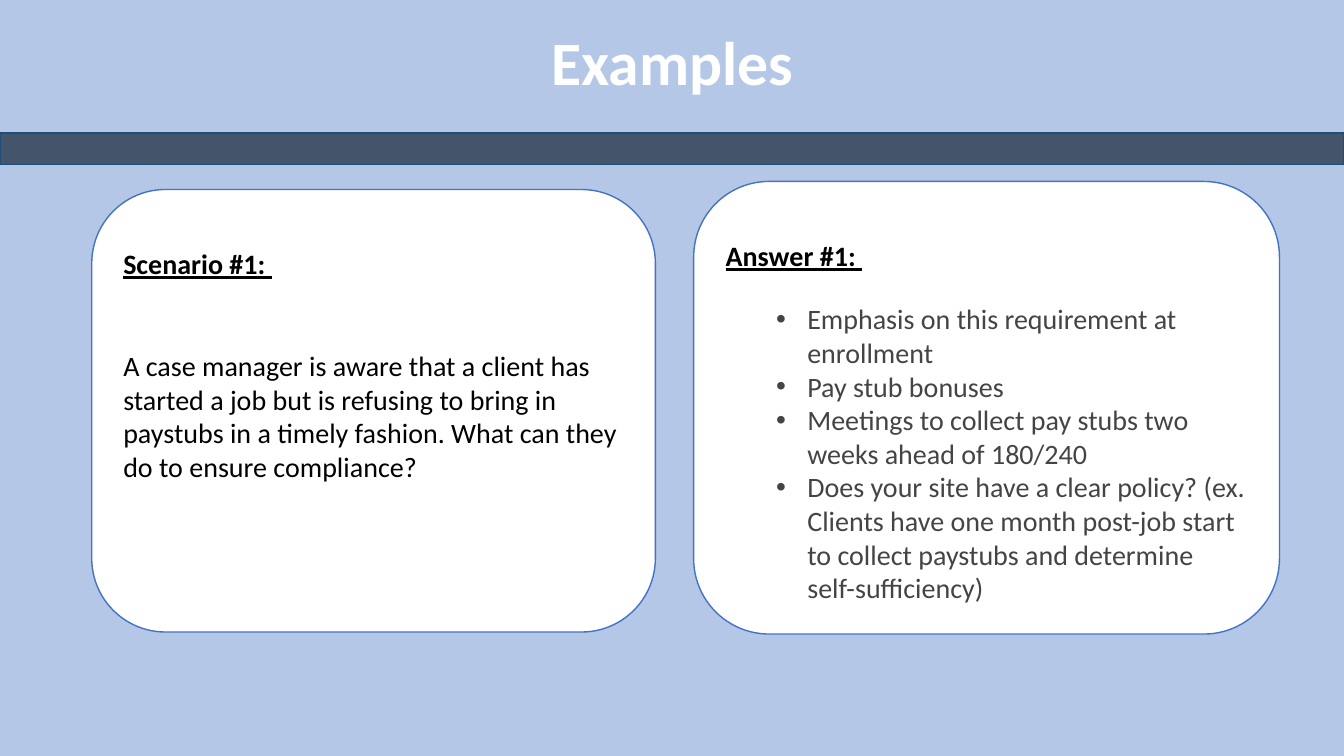
"""Build the Examples slide with a scenario card and an answer card."""
from lxml.etree import SubElement
from pptx import Presentation
from pptx.dml.color import RGBColor
from pptx.enum.shapes import MSO_SHAPE as Shape
from pptx.enum.text import MSO_ANCHOR as Anchor, PP_ALIGN as Align
from pptx.oxml.ns import qn
from pptx.util import Inches, Pt

WHITE = RGBColor(0xFF, 0xFF, 0xFF)
BLACK = RGBColor(0, 0, 0)
GREY = RGBColor(0x44, 0x44, 0x44)
PALE_BLUE = RGBColor(0xB4, 0xC7, 0xE7)
BLUE = RGBColor(0x44, 0x72, 0xC4)
SLATE = RGBColor(0x44, 0x54, 0x6A)
NAVY = RGBColor(0x1F, 0x4E, 0x79)

WIDTH, HEIGHT = 13.33, 7.5
FONT = "Calibri"
TITLE = "Examples"
CARDS = [
    {
        "box": (0.91, 1.88, 5.59, 4.39),
        "heading": "Scenario #1: ",
        "gap": 49,
        "color": BLACK,
        "bulleted": False,
        "body": [
            "A case manager is aware that a client has started a job but is "
            "refusing to bring in paystubs in a timely fashion. What can they "
            "do to ensure compliance? ",
        ],
    },
    {
        "box": (6.88, 1.8, 5.81, 4.49),
        "heading": "Answer #1: ",
        "gap": 21,
        "color": GREY,
        "bulleted": True,
        "body": [
            "Emphasis on this requirement at enrollment",
            "Pay stub bonuses",
            "Meetings to collect pay stubs two weeks ahead of 180/240",
            "Does your site have a clear policy? (ex. Clients have one month "
            "post-job start to collect paystubs and determine self-sufficiency) ",
        ],
    },
]


def add_box(slide, kind, box, fill, line=None):
    shape = slide.shapes.add_shape(kind, *map(Inches, box))
    shape.shadow.inherit = False
    shape.fill.solid()
    shape.fill.fore_color.rgb = fill
    if line is None:
        shape.line.fill.background()
    else:
        shape.line.color.rgb = line
        shape.line.width = Pt(1)
    return shape


def add_run(paragraph, text, size, color, bold=False, underline=False):
    run = paragraph.add_run()
    run.text = text
    font = run.font
    font.name, font.size, font.color.rgb = FONT, Pt(size), color
    font.bold, font.underline = bold, underline


def add_bullet(paragraph):
    paragraph.level = 1
    properties = paragraph._p.get_or_add_pPr()
    properties.set("marL", str(Inches(0.81)))
    properties.set("indent", str(Inches(-0.31)))
    SubElement(properties, qn("a:buFont")).set("typeface", "Arial")
    SubElement(properties, qn("a:buChar")).set("char", "•")


def add_card(slide, card):
    shape = add_box(slide, Shape.ROUNDED_RECTANGLE, card["box"], WHITE, BLUE)
    frame = shape.text_frame
    frame.word_wrap = True
    frame.vertical_anchor = Anchor.TOP
    frame.margin_top = Inches(0.35)
    heading = frame.paragraphs[0]
    heading.alignment = Align.LEFT
    heading.space_after = Pt(card["gap"])
    add_run(heading, card["heading"], 20, BLACK, bold=True, underline=True)
    for text in card["body"]:
        paragraph = frame.add_paragraph()
        paragraph.alignment = Align.LEFT
        if card["bulleted"]:
            add_bullet(paragraph)
        add_run(paragraph, text, 20, card["color"])


def add_title(slide):
    box = slide.shapes.add_textbox(*map(Inches, (0.92, 0.1, 11.5, 1.1)))
    frame = box.text_frame
    frame.word_wrap = True
    frame.vertical_anchor = Anchor.MIDDLE
    paragraph = frame.paragraphs[0]
    paragraph.alignment = Align.CENTER
    paragraph.line_spacing = 0.9
    add_run(paragraph, TITLE, 44, WHITE, bold=True)


def main():
    presentation = Presentation()
    presentation.slide_width = Inches(WIDTH)
    presentation.slide_height = Inches(HEIGHT)
    slide = presentation.slides.add_slide(presentation.slide_layouts[6])
    add_box(slide, Shape.RECTANGLE, (0, 0, WIDTH, HEIGHT), PALE_BLUE)
    add_title(slide)
    for card in CARDS:
        add_card(slide, card)
    add_box(slide, Shape.RECTANGLE, (0, 1.32, WIDTH, 0.31), SLATE, NAVY)
    presentation.save("out.pptx")


if __name__ == "__main__":
    main()
